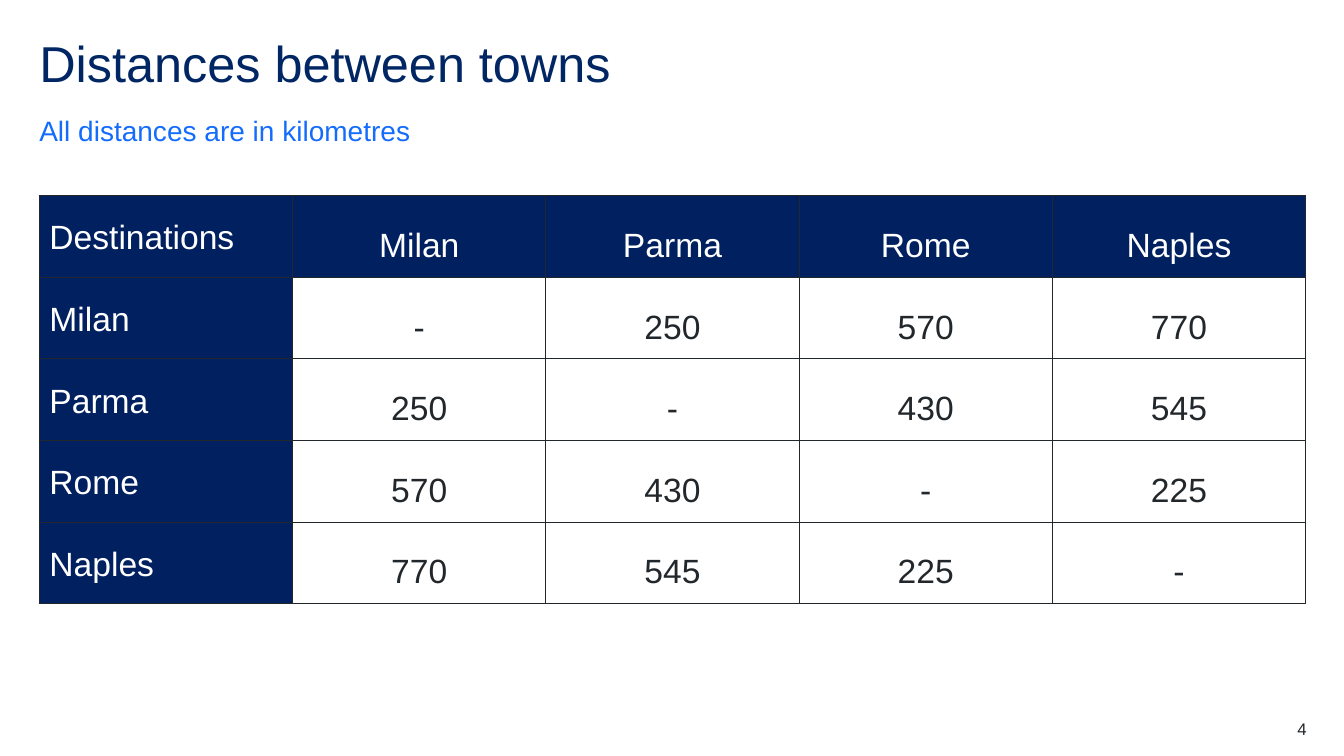
from lxml import etree
from pptx import Presentation
from pptx.dml.color import RGBColor
from pptx.enum.text import MSO_ANCHOR, PP_ALIGN
from pptx.oxml.ns import qn
from pptx.util import Inches, Pt

TOP, MIDDLE, BOTTOM = MSO_ANCHOR.TOP, MSO_ANCHOR.MIDDLE, MSO_ANCHOR.BOTTOM
LEFT, CENTER, RIGHT = PP_ALIGN.LEFT, PP_ALIGN.CENTER, PP_ALIGN.RIGHT

FONT = "Arial"
COLORS = {
    "title": "002664",
    "subtitle": "146CFD",
    "header": "002060",
    "text": "22272B",
    "white": "FFFFFF",
}
MARGIN = 0.39
CONTENT_WIDTH = 12.56
TABLE_TOP = 1.94
ROW_HEIGHT = 0.81

DISTANCES = [
    ["Destinations", "Milan", "Parma", "Rome", "Naples"],
    ["Milan", "-", "250", "570", "770"],
    ["Parma", "250", "-", "430", "545"],
    ["Rome", "570", "430", "-", "225"],
    ["Naples", "770", "545", "225", "-"],
]


def rgb(name):
    return RGBColor.from_string(COLORS[name])


def write_text(text_frame, text, size, color, align=LEFT, line_spacing=1.0, space_after=0):
    paragraph = text_frame.paragraphs[0]
    paragraph.text = text
    paragraph.alignment = align
    paragraph.line_spacing = line_spacing
    paragraph.space_after = Pt(space_after)
    font = paragraph.runs[0].font
    font.name = FONT
    font.size = Pt(size)
    font.color.rgb = rgb(color)


def add_text(slide, left, top, width, height, text, size, color, anchor=TOP, **paragraph_format):
    box = slide.shapes.add_textbox(Inches(left), Inches(top), Inches(width), Inches(height))
    text_frame = box.text_frame
    text_frame.word_wrap = True
    text_frame.vertical_anchor = anchor
    text_frame.margin_left = text_frame.margin_right = 0
    text_frame.margin_top = text_frame.margin_bottom = 0
    write_text(text_frame, text, size, color, **paragraph_format)


def add_borders(cell, color, width):
    """Draw a solid line on all four sides of a cell; call before filling it."""
    properties = cell._tc.get_or_add_tcPr()
    for side in ("a:lnL", "a:lnR", "a:lnT", "a:lnB"):
        line = etree.SubElement(properties, qn(side), w=str(Pt(width)))
        fill = etree.SubElement(line, qn("a:solidFill"))
        etree.SubElement(fill, qn("a:srgbClr"), val=COLORS[color])


def format_cell(cell, text, is_header, is_row_label):
    add_borders(cell, "text", 1)
    cell.fill.solid()
    cell.fill.fore_color.rgb = rgb("header" if is_header else "white")
    cell.vertical_anchor = TOP if is_row_label else MIDDLE
    write_text(
        cell.text_frame, text, 24, "white" if is_header else "text",
        align=LEFT if is_row_label else CENTER, line_spacing=1.5, space_after=12,
    )


def add_distance_table(slide, rows):
    row_count, column_count = len(rows), len(rows[0])
    table = slide.shapes.add_table(
        row_count, column_count, Inches(MARGIN), Inches(TABLE_TOP),
        Inches(CONTENT_WIDTH), Inches(ROW_HEIGHT * row_count),
    ).table
    table.horz_banding = False
    table.first_row = False
    for row_index, row in enumerate(rows):
        for column_index, text in enumerate(row):
            is_row_label = column_index == 0
            is_header = row_index == 0 or is_row_label
            format_cell(table.cell(row_index, column_index), text, is_header, is_row_label)


def main():
    presentation = Presentation()
    presentation.slide_width = Inches(13.33)
    presentation.slide_height = Inches(7.5)
    slide = presentation.slides.add_slide(presentation.slide_layouts[6])

    add_text(slide, MARGIN, 0.39, CONTENT_WIDTH, 0.6, "Distances between towns",
             36, "title", line_spacing=0.9)
    add_text(slide, MARGIN, 1.07, CONTENT_WIDTH, 0.39, "All distances are in kilometres",
             20, "subtitle", anchor=BOTTOM, line_spacing=1.5, space_after=12)
    add_distance_table(slide, DISTANCES)
    add_text(slide, 12.17, 7.13, 0.79, 0.2, "4", 12, "text", align=RIGHT)

    presentation.save("out.pptx")


if __name__ == "__main__":
    main()
